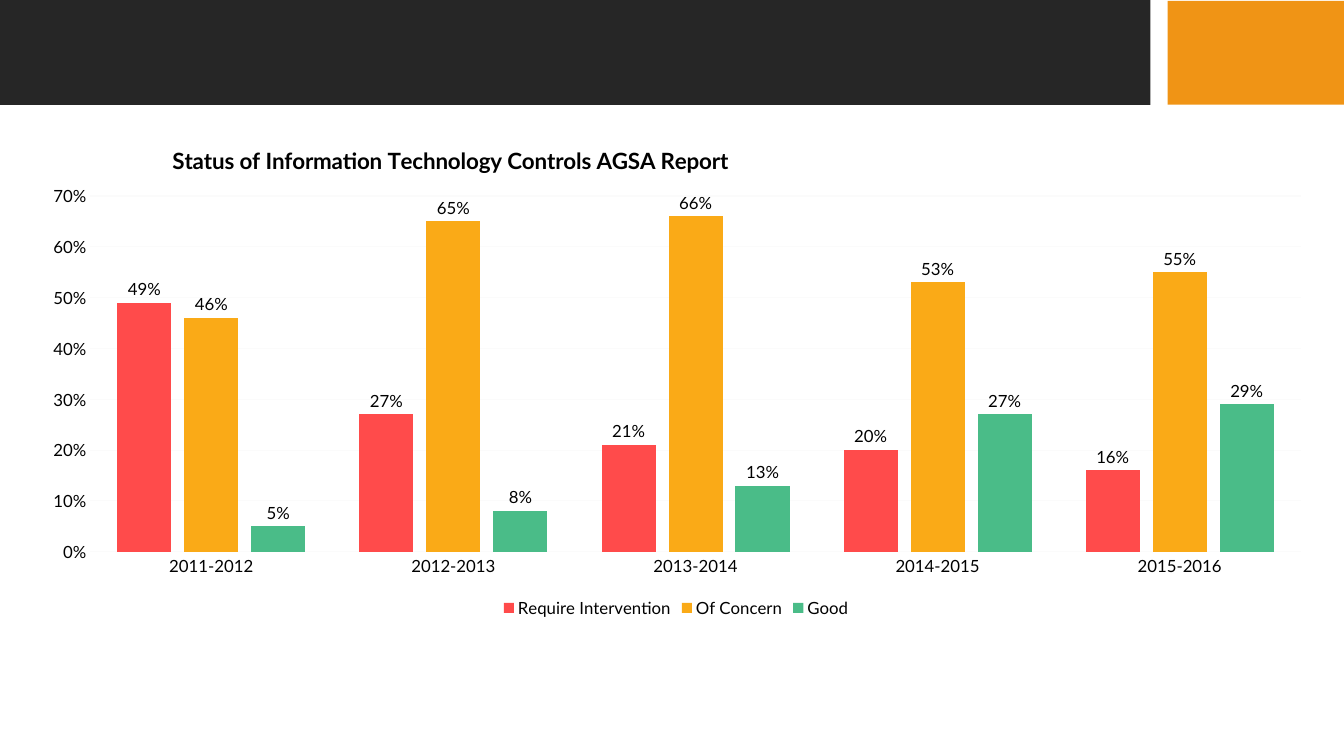
from lxml import etree
from pptx import Presentation
from pptx import util as u
from pptx.chart.data import CategoryChartData
from pptx.dml.color import RGBColor
from pptx.enum import chart as kinds, shapes
from pptx.oxml.ns import qn

WHITE = RGBColor(0xFF, 0xFF, 0xFF)
BLACK = RGBColor(0, 0, 0)
CHARCOAL = RGBColor(0x26, 0x26, 0x26)
ORANGE = RGBColor(0xF0, 0x94, 0x15)
PALE = RGBColor(0xFB, 0xFB, 0xFB)
FONT = "Lato"

YEARS = ["2011-2012", "2012-2013", "2013-2014", "2014-2015", "2015-2016"]
RATINGS = [
    ("Require Intervention", RGBColor(0xFF, 0x4B, 0x4B), [0.49, 0.27, 0.21, 0.20, 0.16]),
    ("Of Concern", RGBColor(0xFA, 0xAA, 0x17), [0.46, 0.65, 0.66, 0.53, 0.55]),
    ("Good", RGBColor(0x4A, 0xBC, 0x88), [0.05, 0.08, 0.13, 0.27, 0.29]),
]


def style_font(font, size=12, color=BLACK, bold=False):
    font.name = FONT
    font.size = u.Pt(size)
    font.bold = bold
    font.color.rgb = color


def style_line(line):
    line.color.rgb = PALE
    line.width = u.Pt(0.75)


def set_layout(parent, position, **settings):
    """Fix a chart part at fractions of the chart area."""
    for old in parent.findall(qn("c:layout")):
        parent.remove(old)
    layout = etree.Element(qn("c:layout"))
    manual = etree.SubElement(layout, qn("c:manualLayout"))
    for name, value in settings.items():
        etree.SubElement(manual, qn(f"c:{name}")).set("val", str(value))
    parent.insert(position, layout)


def add_block(page, left, top, width, height, color):
    block = page.shapes.add_shape(
        shapes.MSO_SHAPE.RECTANGLE, *map(u.Inches, (left, top, width, height)))
    block.shadow.inherit = False
    block.fill.solid()
    block.fill.fore_color.rgb = color
    block.line.fill.background()


def add_header(page, width, height):
    accent, gap = 1.75, 0.17
    add_block(page, 0, 0, width - accent - gap, height, CHARCOAL)
    add_block(page, width - accent, 0.01, accent, height - 0.01, ORANGE)


def style_title(chart, title):
    chart.has_title = True
    para = chart.chart_title.text_frame.paragraphs[0]
    span = para.add_run()
    span.text = title
    style_font(span.font, size=16, bold=True)
    set_layout(chart.chart_title._element, 1,
               xMode="edge", yMode="edge", x=0.11, y=0.04)


def style_axes(chart):
    for axis in (chart.category_axis, chart.value_axis):
        axis.major_tick_mark = axis.minor_tick_mark = kinds.XL_TICK_MARK.NONE
        style_font(axis.tick_labels.font)
    style_line(chart.category_axis.format.line)
    values = chart.value_axis
    values.format.line.fill.background()
    values.has_major_gridlines = True
    style_line(values.major_gridlines.format.line)
    values.minimum_scale, values.maximum_scale, values.major_unit = 0, 0.7, 0.1
    values.tick_labels.number_format = "0%"
    values.tick_labels.number_format_is_linked = False


def style_columns(chart):
    plot = chart.plots[0]
    plot.vary_by_categories = False
    plot.gap_width, plot.overlap = 100, -24
    for series, (_, color, _) in zip(plot.series, RATINGS):
        series.format.fill.solid()
        series.format.fill.fore_color.rgb = color
        labels = series.data_labels
        labels.show_value = True
        labels.position = kinds.XL_LABEL_POSITION.OUTSIDE_END
        labels.number_format = "0%"
        labels.number_format_is_linked = False
        style_font(labels.font)


def add_ratings_chart(page, left, top, width, height):
    data = CategoryChartData(number_format="0%")
    data.categories = YEARS
    for name, _, values in RATINGS:
        data.add_series(name, values)
    chart = page.shapes.add_chart(
        kinds.XL_CHART_TYPE.COLUMN_CLUSTERED,
        *map(u.Inches, (left, top, width, height)), data).chart
    style_font(chart.font, size=10, color=WHITE)
    style_title(chart, "Status of Information Technology Controls AGSA Report")
    style_axes(chart)
    style_columns(chart)
    set_layout(chart._chartSpace.chart.plotArea, 0, layoutTarget="inner",
               xMode="edge", yMode="edge", x=0.05, y=0.15, w=0.93, h=0.71)
    chart.has_legend = True
    chart.legend.position = kinds.XL_LEGEND_POSITION.BOTTOM
    chart.legend.include_in_layout = False
    style_font(chart.legend.font)


def main():
    deck = Presentation()
    deck.slide_width, deck.slide_height = u.Inches(13.33), u.Inches(7.5)
    page = deck.slides.add_slide(deck.slide_layouts.get_by_name("Blank"))
    page.background.fill.solid()
    page.background.fill.fore_color.rgb = WHITE
    add_header(page, 13.33, 1.04)
    add_ratings_chart(page, 0.25, 1.2, 12.91, 4.97)
    deck.save("out.pptx")


if __name__ == "__main__":
    main()
